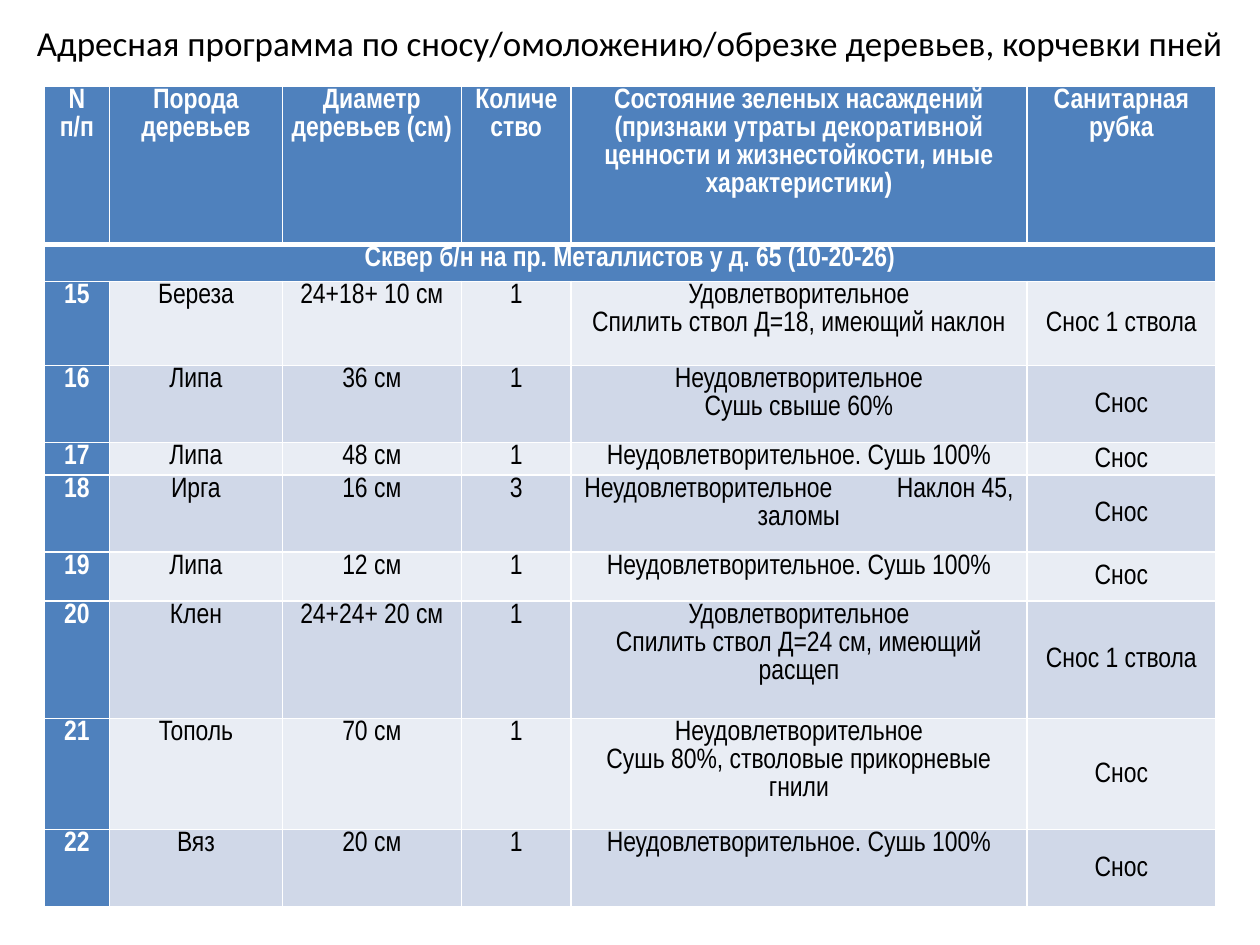
from lxml import etree
from pptx import Presentation
from pptx.dml.color import RGBColor
from pptx.enum.text import MSO_ANCHOR, MSO_AUTO_SIZE, PP_ALIGN
from pptx.oxml.ns import qn
from pptx.util import Cm, Pt

CENTER = PP_ALIGN.CENTER
TOP, MIDDLE = MSO_ANCHOR.TOP, MSO_ANCHOR.MIDDLE
NO_AUTOFIT = MSO_AUTO_SIZE.NONE
TITLE_ONLY = 5

TITLE = "Адресная программа по сносу/омоложению/обрезке деревьев, корчевки пней"
HEADERS = [
    "N п/п", "Порода деревьев", "Диаметр\nдеревьев (см)", "Количество",
    "Состояние зеленых насаждений (признаки утраты декоративной ценности "
    "и жизнестойкости, иные характеристики)",
    "Санитарная рубка",
]
SECTION = "Сквер б/н на пр. Металлистов у д. 65 (10-20-26)"
FIRST_NUMBER = 15
DRY = "Неудовлетворительное. Сушь 100%"
TREES = [
    ("Береза", "24+18+ 10 см", "1",
     "Удовлетворительное\nСпилить ствол Д=18, имеющий наклон", "Снос 1 ствола"),
    ("Липа", "36 см", "1", "Неудовлетворительное\nСушь свыше 60%", "Снос"),
    ("Липа", "48 см", "1", DRY, "Снос"),
    ("Ирга", "16 см", "3", "Неудовлетворительное\tНаклон 45, заломы", "Снос"),
    ("Липа", "12 см", "1", DRY, "Снос"),
    ("Клен", "24+24+ 20 см", "1",
     "Удовлетворительное\nСпилить ствол Д=24 см, имеющий расщеп", "Снос 1 ствола"),
    ("Тополь", "70 см", "1",
     "Неудовлетворительное\nСушь 80%, стволовые прикорневые гнили", "Снос"),
    ("Вяз", "20 см", "1", DRY, "Снос"),
]
COL_WIDTHS = [1.32, 3.48, 3.61, 2.21, 9.19, 3.81]
ROW_HEIGHTS = [3.2, 0.74, 1.7, 1.55, 0.66, 1.55, 0.99, 2.36, 2.24, 1.55]


def rgb(value):
    return RGBColor.from_string(value)


class SlideBuilder:
    TITLE_FONT, TABLE_FONT = "Calibri", "Arial Narrow"
    TITLE_SIZE, TABLE_SIZE = Pt(20), Pt(16)
    BLACK, WHITE, BLUE = "000000", "FFFFFF", "4F81BD"
    BANDS = ["E9EDF4", "D0D8E8"]
    TAB_STOP = Cm(6.3)

    def __init__(self, prs):
        self.s = prs.slides.add_slide(prs.slide_layouts[TITLE_ONLY])

    def format_run(self, r, font, size, color, bold=False):
        r.font.name = font
        r.font.size = size
        r.font.bold = bold
        r.font.color.rgb = rgb(color)

    def title(self, text, left, top, width, height):
        sp = self.s.shapes.title
        sp.left, sp.top, sp.width, sp.height = map(Cm, (left, top, width, height))
        tf = sp.text_frame
        tf.text = text
        tf.auto_size = NO_AUTOFIT
        tf.vertical_anchor = MIDDLE
        p = tf.paragraphs[0]
        p.alignment = CENTER
        self.format_run(p.runs[0], self.TITLE_FONT, self.TITLE_SIZE, self.BLACK)

    def borders(self, cell, top=1, bottom=1):
        tc_pr = cell._tc.get_or_add_tcPr()
        for tag, points in (("lnL", 1), ("lnR", 1), ("lnT", top), ("lnB", bottom)):
            ln = etree.SubElement(tc_pr, qn(f"a:{tag}"), w=str(Pt(points)))
            fill = etree.SubElement(ln, qn("a:solidFill"))
            etree.SubElement(fill, qn("a:srgbClr"), val=self.WHITE)

    def tab_stop(self, p):
        tabs = etree.SubElement(p._p.get_or_add_pPr(), qn("a:tabLst"))
        etree.SubElement(tabs, qn("a:tab"), pos=str(self.TAB_STOP), algn="l")

    def cell(self, cell, text, fill, heading, anchor):
        cell.fill.solid()
        cell.fill.fore_color.rgb = rgb(fill)
        cell.margin_left = cell.margin_right = Cm(0.18)
        cell.margin_top = cell.margin_bottom = 0
        cell.vertical_anchor = anchor
        tf = cell.text_frame
        tf.text = text
        color = self.WHITE if heading else self.BLACK
        for p in tf.paragraphs:
            if "\t" in p.text:
                self.tab_stop(p)
            p.alignment = CENTER
            p.line_spacing = 1.07
            for r in p.runs:
                self.format_run(r, self.TABLE_FONT, self.TABLE_SIZE, color, heading)

    def table(self, rows, left, top, widths, heights):
        """Two heading rows, then banded rows with a heading column."""
        table = self.s.shapes.add_table(
            len(rows), len(widths), Cm(left), Cm(top),
            Cm(sum(widths)), Cm(sum(heights))).table
        for column, width in zip(table.columns, widths):
            column.width = Cm(width)
        for row, height in zip(table.rows, heights):
            row.height = Cm(height)
        for i, texts in enumerate(rows):
            for j in range(len(widths)):
                self.borders(table.cell(i, j), top=3 if i == 1 else 1,
                             bottom=3 if i == 0 else 1)
            if len(texts) == 1:
                table.cell(i, 0).merge(table.cell(i, len(widths) - 1))
            for j, text in enumerate(texts):
                heading = i < 2 or j == 0
                fill = self.BLUE if heading else self.BANDS[i % 2]
                anchor = MIDDLE if i >= 2 and j == len(widths) - 1 else TOP
                self.cell(table.cell(i, j), text, fill, heading, anchor)


def main():
    prs = Presentation()
    prs.slide_width, prs.slide_height = Cm(25.4), Cm(19.05)
    builder = SlideBuilder(prs)
    builder.title(TITLE, 0, 0, 25.4, 1.73)
    trees = [(str(n), *tree) for n, tree in enumerate(TREES, FIRST_NUMBER)]
    builder.table([HEADERS, [SECTION], *trees], 0.89, 1.73, COL_WIDTHS, ROW_HEIGHTS)
    prs.save("out.pptx")


if __name__ == "__main__":
    main()
